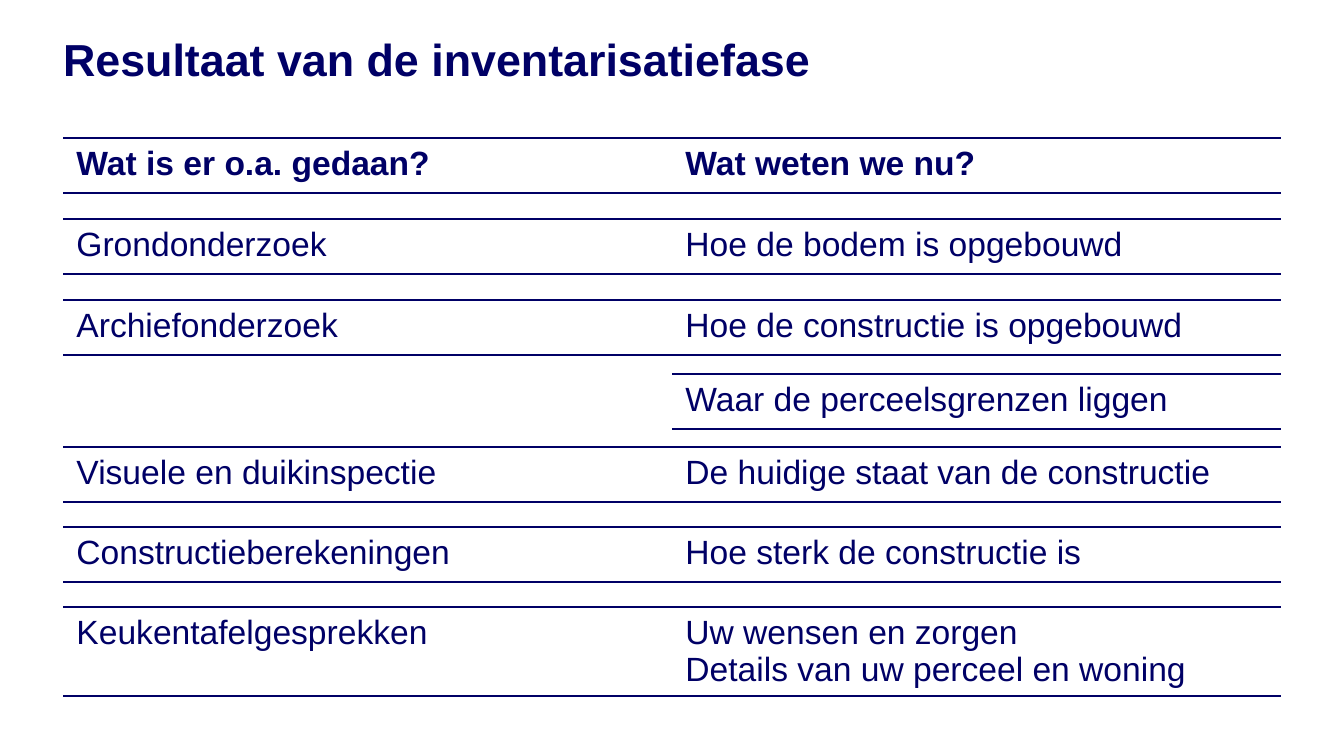
import lxml.etree
import pptx
import pptx.dml.color
import pptx.enum.text
import pptx.oxml.ns
import pptx.util

NAVY = pptx.dml.color.RGBColor(0x00, 0x00, 0x66)
WHITE = pptx.dml.color.RGBColor(0xFF, 0xFF, 0xFF)
EMU_PER_PX = 914400 / 134.4
LEFT = 63
COLUMN_WIDTH = 609
ROW_HEIGHT = 55


def px(length):
    return pptx.util.Emu(round(length * EMU_PER_PX))


def write_text(text_frame, text, size=18, bold=False, color=NAVY, font="Arial"):
    text_frame.word_wrap = True
    for index, line in enumerate(text.split("\n")):
        paragraph = text_frame.paragraphs[0] if index == 0 else text_frame.add_paragraph()
        paragraph.alignment = pptx.enum.text.PP_ALIGN.LEFT
        run = paragraph.add_run()
        run.text = line
        run.font.size = pptx.util.Pt(size)
        run.font.bold = bold
        run.font.name = font
        run.font.color.rgb = color


class SlideBuilder:
    def __init__(self, presentation):
        self.border_color = NAVY
        self.border_width = pptx.util.Pt(1)
        self.slide = presentation.slides.add_slide(presentation.slide_layouts[5])
        self.slide.background.fill.solid()
        self.slide.background.fill.fore_color.rgb = WHITE

    def title(self, text, left, top, width, height):
        shape = self.slide.shapes.title
        shape.left, shape.top = px(left), px(top)
        shape.width, shape.height = px(width), px(height)
        frame = shape.text_frame
        frame.margin_left = frame.margin_right = 0
        frame.margin_top = frame.margin_bottom = 0
        frame.vertical_anchor = pptx.enum.text.MSO_ANCHOR.BOTTOM
        frame.auto_size = pptx.enum.text.MSO_AUTO_SIZE.NONE
        write_text(frame, text, size=24, bold=True)

    def border(self, cell, side, visible):
        qn = pptx.oxml.ns.qn
        properties = cell._tc.get_or_add_tcPr()
        line = lxml.etree.SubElement(properties, qn(f"a:ln{side}"))
        if visible:
            line.set("w", str(self.border_width))
            fill = lxml.etree.SubElement(line, qn("a:solidFill"))
            lxml.etree.SubElement(fill, qn("a:srgbClr"), val=str(self.border_color))
        else:
            lxml.etree.SubElement(line, qn("a:noFill"))

    def table_row(self, texts, left, top, height, bold=False):
        width = COLUMN_WIDTH * len(texts)
        frame = self.slide.shapes.add_table(
            1, len(texts), px(left), px(top), px(width), px(height)
        )
        table = frame.table
        table.first_row = False
        table.horz_banding = False
        for column, text in enumerate(texts):
            table.columns[column].width = px(COLUMN_WIDTH)
            cell = table.cell(0, column)
            for side in "LRTB":
                self.border(cell, side, side in "TB")
            cell.fill.background()
            write_text(cell.text_frame, text, bold=bold)


def main():
    presentation = pptx.Presentation()
    presentation.slide_width = px(1344)
    presentation.slide_height = px(756)
    builder = SlideBuilder(presentation)
    builder.title("Resultaat van de inventarisatiefase", LEFT, 31, 2 * COLUMN_WIDTH, 54)
    builder.table_row(
        ["Wat is er o.a. gedaan?", "Wat weten we nu?"], LEFT, 138, ROW_HEIGHT, bold=True
    )
    findings = [
        (219, ["Grondonderzoek", "Hoe de bodem is opgebouwd"]),
        (300, ["Archiefonderzoek", "Hoe de constructie is opgebouwd"]),
        (447, ["Visuele en duikinspectie", "De huidige staat van de constructie"]),
        (527, ["Constructieberekeningen", "Hoe sterk de constructie is"]),
    ]
    for top, texts in findings:
        builder.table_row(texts, LEFT, top, ROW_HEIGHT)
    builder.table_row(
        ["Waar de perceelsgrenzen liggen"], LEFT + COLUMN_WIDTH, 374, ROW_HEIGHT
    )
    builder.table_row(
        ["Keukentafelgesprekken", "Uw wensen en zorgen\nDetails van uw perceel en woning"],
        LEFT, 607, 88,
    )
    presentation.save("out.pptx")


if __name__ == "__main__":
    main()
